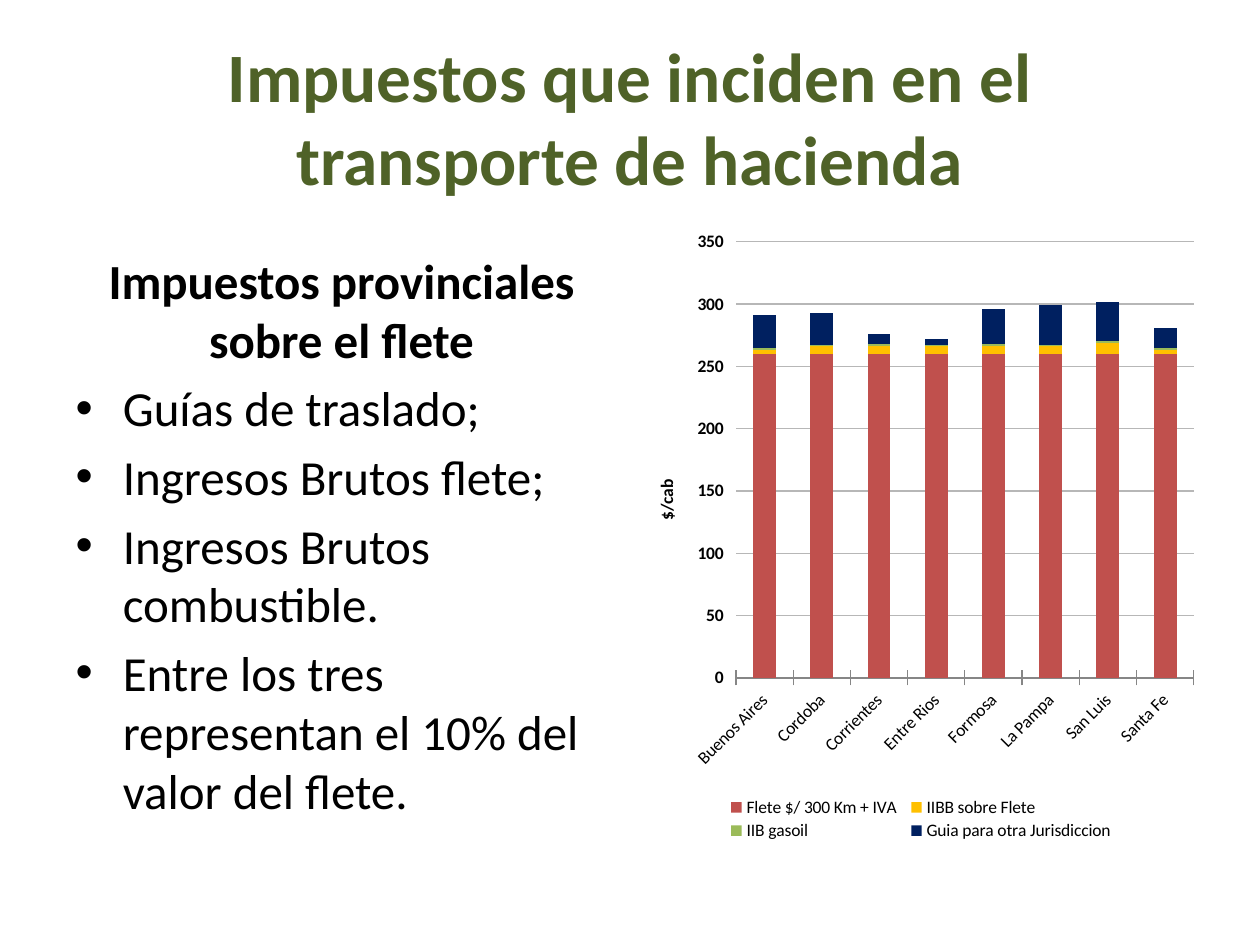
import pptx
import pptx.chart.data
import pptx.dml.color
import pptx.enum.chart
import pptx.enum.text
import pptx.oxml
import pptx.oxml.ns
import pptx.util

RGBColor = pptx.dml.color.RGBColor
GREEN = RGBColor(0x4F, 0x62, 0x28)
BLACK = RGBColor(0, 0, 0)
WHITE = RGBColor(255, 255, 255)
GRID = RGBColor(0xB7, 0xB7, 0xB7)
AXIS = RGBColor(0x86, 0x86, 0x86)
RED = RGBColor(0xC0, 0x50, 0x4D)
YELLOW = RGBColor(0xFF, 0xC0, 0x00)
LIME = RGBColor(0x9B, 0xBB, 0x59)
NAVY = RGBColor(0x00, 0x20, 0x60)

FONT = "Calibri"
PX = 914400 // 126
SLIDE_SIZE = (1260, 945)
TITLE_BOX = (63, 38, 1134, 157)
BODY_BOX = (63, 244, 557, 600)
CHART_BOX = (630, 220, 576, 624)
PLOT_BOX = (736, 242, 458, 436)
LEGEND_BOX = (725, 791, 400, 50)

TITLE = "Impuestos que inciden en el transporte de hacienda"
HEADING = "Impuestos provinciales sobre el flete"
BULLETS = [
    "Guías de traslado;",
    "Ingresos Brutos flete;",
    "Ingresos Brutos combustible.",
    "Entre los tres representan el 10% del valor del flete.",
]
PROVINCES = ["Buenos Aires", "Cordoba", "Corrientes", "Entre Rios",
             "Formosa", "La Pampa", "San Luis", "Santa Fe"]
SERIES = [
    ("Flete $/ 300 Km + IVA", RED, [260] * 8),
    ("IIBB sobre Flete ", YELLOW, [3, 6, 6, 6, 6, 6, 9, 3]),
    ("IIB gasoil", LIME, [2, 1, 2, 1, 2, 1, 1, 2]),
    ("Guia para otra Jurisdiccion", NAVY, [26, 26, 8, 5, 28, 32, 32, 16]),
]


def emu(box):
    return [length * PX for length in box]


def place(shape, box):
    shape.left, shape.top, shape.width, shape.height = emu(box)


def format_font(font, size, color=BLACK, bold=False):
    font.name = FONT
    font.size = pptx.util.Pt(size)
    font.bold = bold
    font.color.rgb = color


def format_paragraph(paragraph, size, color, bold):
    for run in paragraph.runs:
        format_font(run.font, size, color, bold)


def chart_layout(box, inner=False):
    left, top, width, height = CHART_BOX
    fractions = {
        "x": (box[0] - left) / width,
        "y": (box[1] - top) / height,
        "w": box[2] / width,
        "h": box[3] / height,
    }
    target = '<c:layoutTarget val="inner"/>' if inner else ""
    modes = '<c:xMode val="edge"/><c:yMode val="edge"/>'
    values = "".join(f'<c:{name} val="{value:.2f}"/>' if not inner else
                     f'<c:{name} val="{value:.3f}"/>'
                     for name, value in fractions.items())
    return pptx.oxml.parse_xml(
        f'<c:layout {pptx.oxml.ns.nsdecls("c")}><c:manualLayout>'
        f'{target}{modes}{values}</c:manualLayout></c:layout>')


def add_text(slide):
    title, body = slide.shapes.title, slide.placeholders[1]
    place(title, TITLE_BOX)
    title.text_frame.text = TITLE
    title.text_frame.vertical_anchor = pptx.enum.text.MSO_ANCHOR.MIDDLE
    format_paragraph(title.text_frame.paragraphs[0], 39.6, GREEN, True)

    place(body, BODY_BOX)
    body.text_frame.text = "\n".join([HEADING] + BULLETS)
    heading, *bullets = body.text_frame.paragraphs
    heading.alignment = pptx.enum.text.PP_ALIGN.CENTER
    format_paragraph(heading, 28, BLACK, True)
    properties = heading._p.get_or_add_pPr()
    properties.set("marL", "0")
    properties.set("indent", "0")
    properties.append(pptx.oxml.parse_xml(
        f'<a:buNone {pptx.oxml.ns.nsdecls("a")}/>'))
    for bullet in bullets:
        format_paragraph(bullet, 28, BLACK, False)


def format_axes(chart):
    category_axis, value_axis = chart.category_axis, chart.value_axis
    for axis in (category_axis, value_axis):
        axis.major_tick_mark = pptx.enum.chart.XL_TICK_MARK.CROSS
        axis.minor_tick_mark = pptx.enum.chart.XL_TICK_MARK.NONE
    format_font(category_axis.tick_labels.font, 10)
    category_axis.format.line.color.rgb = AXIS
    body = category_axis._element.find(pptx.oxml.ns.qn("c:txPr")).bodyPr
    body.set("rot", "-2700000")
    body.set("vert", "horz")

    format_font(value_axis.tick_labels.font, 10, bold=True)
    value_axis.tick_labels.number_format = "0"
    value_axis.tick_labels.number_format_is_linked = False
    value_axis.minimum_scale = 0
    value_axis.maximum_scale = 350
    value_axis.major_unit = 50
    value_axis.format.line.fill.background()
    value_axis.major_gridlines.format.line.color.rgb = GRID
    value_axis.major_gridlines.format.line.width = pptx.util.Pt(0.75)
    value_axis.axis_title.text_frame.text = "$/cab"
    format_paragraph(value_axis.axis_title.text_frame.paragraphs[0],
                     10, BLACK, True)


def add_chart(slide):
    data = pptx.chart.data.CategoryChartData(number_format="0")
    data.categories = PROVINCES
    for name, color, values in SERIES:
        data.add_series(name, values)
    chart = slide.shapes.add_chart(
        pptx.enum.chart.XL_CHART_TYPE.COLUMN_STACKED,
        *emu(CHART_BOX), data).chart
    format_font(chart.font, 10)
    chart.has_title = False
    plot = chart.plots[0]
    plot.gap_width = 150
    plot.overlap = 100
    plot.vary_by_categories = False
    for series, (name, color, values) in zip(plot.series, SERIES):
        series.format.fill.solid()
        series.format.fill.fore_color.rgb = color
    format_axes(chart)

    chart.has_legend = True
    chart.legend.position = pptx.enum.chart.XL_LEGEND_POSITION.BOTTOM
    chart.legend.include_in_layout = False
    format_font(chart.legend.font, 10)

    plot_area = chart._chartSpace.chart.plotArea
    for layout in plot_area.findall(pptx.oxml.ns.qn("c:layout")):
        plot_area.remove(layout)
    plot_area.insert(0, chart_layout(PLOT_BOX, inner=True))
    legend = chart.legend._element
    for layout in legend.findall(pptx.oxml.ns.qn("c:layout")):
        legend.remove(layout)
    legend.find(pptx.oxml.ns.qn("c:legendPos")).addnext(
        chart_layout(LEGEND_BOX))
    plot_area.append(pptx.oxml.parse_xml(
        f'<c:spPr {pptx.oxml.ns.nsdecls("c", "a")}><a:solidFill>'
        f'<a:srgbClr val="{WHITE}"/></a:solidFill></c:spPr>'))


def main():
    presentation = pptx.Presentation()
    presentation.slide_width, presentation.slide_height = emu(SLIDE_SIZE)
    slide = presentation.slides.add_slide(presentation.slide_layouts[1])
    add_text(slide)
    add_chart(slide)
    presentation.save("out.pptx")


if __name__ == "__main__":
    main()
